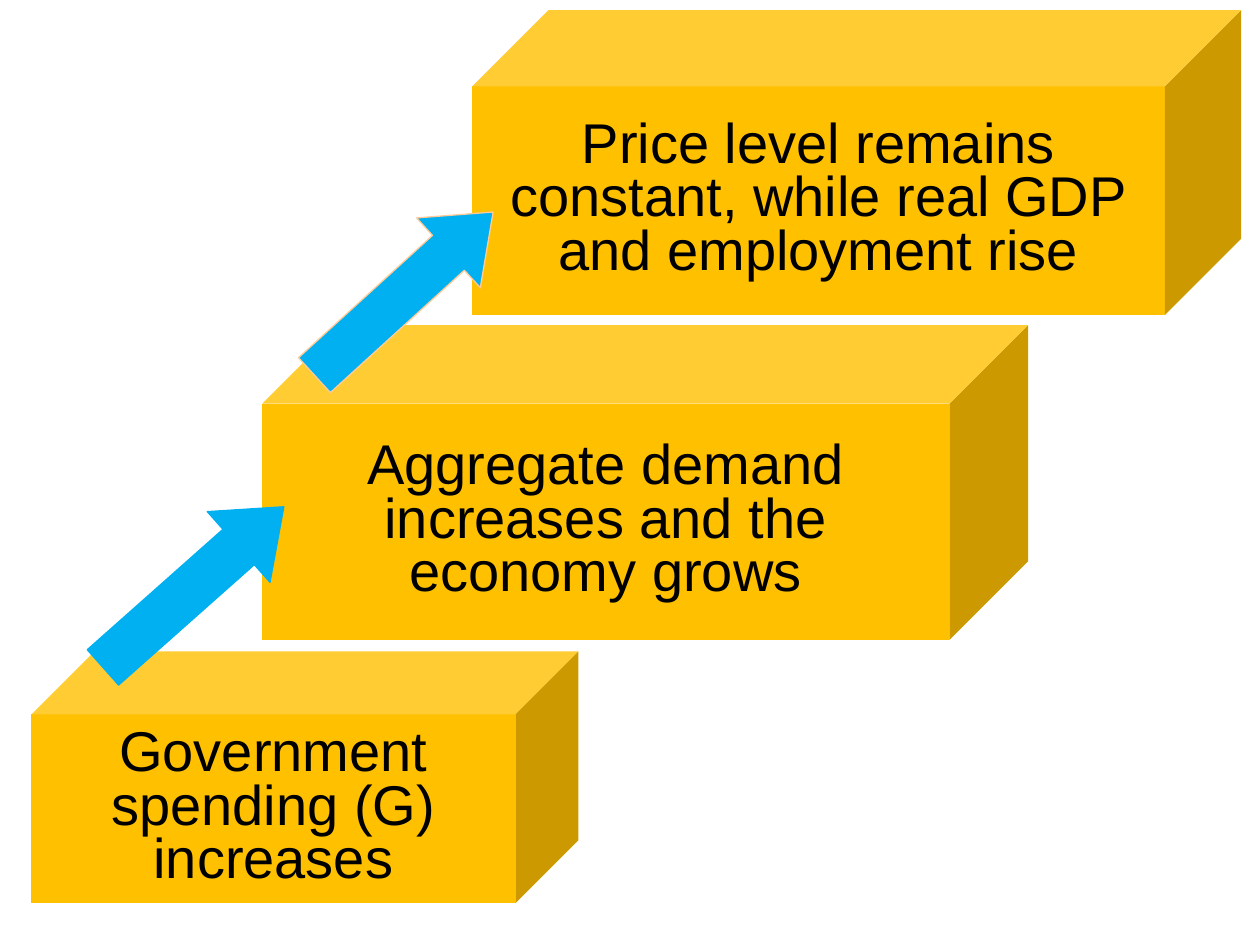
from pptx import Presentation
from pptx.dml.color import RGBColor
from pptx.enum.shapes import MSO_SHAPE
from pptx.enum.text import MSO_ANCHOR, PP_ALIGN
from pptx.util import Pt

CUBE, UP_ARROW = MSO_SHAPE.CUBE, MSO_SHAPE.UP_ARROW
MIDDLE, CENTER = MSO_ANCHOR.MIDDLE, PP_ALIGN.CENTER

GOLD = RGBColor(0xFF, 0xC0, 0x00)
BLUE = RGBColor(0x00, 0xB0, 0xF0)
PEACH = RGBColor(0xFF, 0xCC, 0x99)
BLACK = RGBColor(0x00, 0x00, 0x00)

# Left, top, width, height; vertical text margin; wording
STEPS = [
    ((18, 372.24, 312.48, 144), 3.6, "Government spending (G) increases"),
    ((149.76, 185.76, 437.76, 180), 39.6,
     "Aggregate demand increases and the economy grows"),
    ((270, 5.76, 439.2, 174.24), 39.6,
     "Price level remains constant, while real GDP and employment rise"),
]
# Left, top, width, height; rotation; outline
ARROWS = [
    ((83.52, 266.4, 54, 138.24), 48.4, BLUE),
    ((203.76, 98.64, 54, 138.24), 47.6, PEACH),
]


def set_values(target, values):
    for name, value in values.items():
        setattr(target, name, value)


def add_filled_shape(page, kind, box, color):
    shape = page.shapes.add_shape(kind, *(Pt(length) for length in box))
    shape.shadow.inherit = False
    shape.fill.solid()
    shape.fill.fore_color.rgb = color
    return shape


def add_step(page, box, margin, wording):
    cube = add_filled_shape(page, CUBE, box, GOLD)
    cube.adjustments[0] = 0.25
    cube.line.fill.background()
    frame = cube.text_frame
    set_values(frame, {
        "word_wrap": True, "vertical_anchor": MIDDLE,
        "margin_left": Pt(7.2), "margin_right": Pt(7.2),
        "margin_top": Pt(margin), "margin_bottom": Pt(margin),
    })
    para = frame.paragraphs[0]
    set_values(para, {"alignment": CENTER, "line_spacing": 0.8,
                      "space_before": Pt(6.4)})
    span = para.add_run()
    span.text = wording
    set_values(span.font, {"name": "Arial", "size": Pt(32)})
    span.font.color.rgb = BLACK


def add_rising_arrow(page, box, rotation, outline):
    arrow = add_filled_shape(page, UP_ARROW, box, BLUE)
    arrow.rotation = rotation
    arrow.adjustments[0] = 0.5
    arrow.adjustments[1] = 0.64
    arrow.line.color.rgb = outline
    arrow.line.width = Pt(0.75)


def main():
    deck = Presentation()
    set_values(deck, {"slide_width": Pt(720), "slide_height": Pt(540)})
    page = deck.slides.add_slide(deck.slide_layouts[6])
    for step in STEPS:
        add_step(page, *step)
    for arrow in ARROWS:
        add_rising_arrow(page, *arrow)
    deck.save("out.pptx")


if __name__ == "__main__":
    main()
